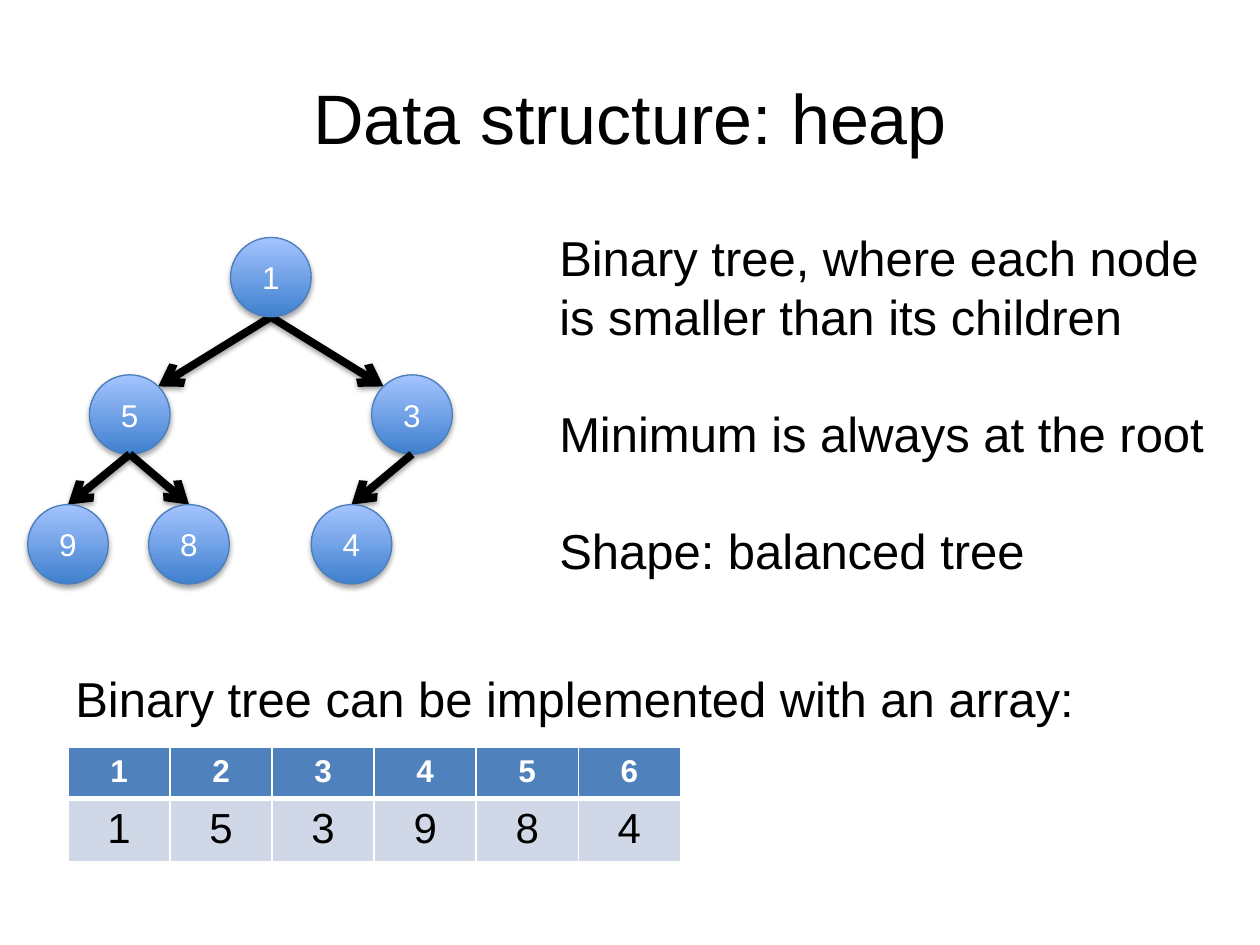
import math

import pptx
import pptx.dml.color
import pptx.enum.shapes
import pptx.enum.text
import pptx.oxml
import pptx.oxml.ns
import pptx.util
from pptx.util import Inches, Pt

FONT = "Arial"
BLACK, WHITE = "000000", "FFFFFF"
NODE_BOTTOM, NODE_TOP, NODE_LINE = "3F80CE", "A4C4FF", "4B7EBC"
HEADER_FILL, BODY_FILL = "4F81BD", "D0D8E8"

TITLE = "Data structure: heap"
FACTS = [
    "Binary tree, where each node is smaller than its children",
    "Minimum is always at the root",
    "Shape: balanced tree",
]
ARRAY_CAPTION = "Binary tree can be implemented with an array:"
HEAP = ["1", "5", "3", "9", "8", "4"]

# Centre of each node, and the (parent, child) edges of the tree
NODE_SIZE = (0.64, 0.63)
NODES = {
    "1": (2.15, 2.2),
    "5": (1.03, 3.29), "3": (3.27, 3.29),
    "9": (0.54, 4.32), "8": (1.5, 4.32), "4": (2.79, 4.32),
}
# Each layer draws its edges first, then its nodes over them
LAYERS = [
    ([("1", "5"), ("1", "3")], ["5", "1", "3"]),
    ([("5", "9"), ("5", "8"), ("3", "4")], ["9", "8", "4"]),
]

TABLE_LEFT, TABLE_TOP, COLUMN_WIDTH = 0.54, 5.93, 0.81
ROW_HEIGHTS = (0.41, 0.5)


def rgb(color):
    return pptx.dml.color.RGBColor.from_string(color)


def xml(text):
    """Parse one DrawingML element whose prefix is a."""
    head, rest = text.split(" ", 1)
    return pptx.oxml.parse_xml(f"{head} {pptx.oxml.ns.nsdecls('a')} {rest}")


def add_run(paragraph, text, size, color, bold=False):
    run = paragraph.add_run()
    run.text = text
    run.font.name = FONT
    run.font.size = Pt(size)
    run.font.bold = bold
    run.font.color.rgb = rgb(color)


def add_shadow(shape, distance, opacity):
    shape._element.spPr.append(xml(
        f'<a:effectLst ><a:outerShdw blurRad="{Pt(3.1)}" dist="{Pt(distance)}" '
        f'dir="5400000" rotWithShape="0"><a:srgbClr val="{BLACK}">'
        f'<a:alpha val="{opacity * 1000}"/></a:srgbClr></a:outerShdw></a:effectLst>'))


def add_edge(slide, parent, child):
    """Draw an arrow from below the parent to the near edge of the child."""
    (x1, y1), (x2, y2) = NODES[parent], NODES[child]
    width, height = NODE_SIZE
    if parent == "1":
        x2 += math.copysign(width / 2 * math.sqrt(0.5), x1 - x2)
        y2 -= height / 2 * math.sqrt(0.5)
    else:
        y2 -= height / 2
    edge = slide.shapes.add_connector(
        pptx.enum.shapes.MSO_CONNECTOR.STRAIGHT,
        Inches(x1), Inches(y1 + height / 2), Inches(x2), Inches(y2))
    edge.line.color.rgb = rgb(BLACK)
    edge.line.width = Pt(4.5)
    edge.line._get_or_add_ln().append(xml('<a:tailEnd type="arrow"/>'))
    add_shadow(edge, 1.6, 38)


def add_node(slide, label):
    x, y = NODES[label]
    width, height = NODE_SIZE
    node = slide.shapes.add_shape(
        pptx.enum.shapes.MSO_SHAPE.OVAL, Inches(x - width / 2),
        Inches(y - height / 2), Inches(width), Inches(height))
    node.fill.gradient()
    node.fill.gradient_angle = 90
    for stop, color in zip(node.fill.gradient_stops, (NODE_BOTTOM, NODE_TOP)):
        stop.color.rgb = rgb(color)
    node.line.color.rgb = rgb(NODE_LINE)
    node.line.width = Pt(0.75)
    add_shadow(node, 1.8, 35)
    node.text_frame.vertical_anchor = pptx.enum.text.MSO_ANCHOR.MIDDLE
    paragraph = node.text_frame.paragraphs[0]
    paragraph.alignment = pptx.enum.text.PP_ALIGN.CENTER
    add_run(paragraph, label, 18, WHITE)


def add_text(slide, box, lines):
    frame = slide.shapes.add_textbox(*map(Inches, box)).text_frame
    frame.word_wrap = True
    for index, line in enumerate(lines):
        paragraph = frame.add_paragraph() if index else frame.paragraphs[0]
        paragraph.line_spacing = Pt(33.5)
        paragraph.space_before = Pt(33.5 if index else 0)
        add_run(paragraph, line, 28, BLACK)


def add_array(slide):
    rows = [
        ([str(i + 1) for i in range(len(HEAP))], 18, WHITE, True, HEADER_FILL, (1, 3)),
        (HEAP, 24, BLACK, False, BODY_FILL, (3, 1)),
    ]
    table = slide.shapes.add_table(
        len(rows), len(HEAP), Inches(TABLE_LEFT), Inches(TABLE_TOP),
        Inches(COLUMN_WIDTH * len(HEAP)), Inches(sum(ROW_HEIGHTS))).table
    for column in table.columns:
        column.width = Inches(COLUMN_WIDTH)
    for r, (values, size, color, bold, fill, (top, bottom)) in enumerate(rows):
        table.rows[r].height = Inches(ROW_HEIGHTS[r])
        for c, value in enumerate(values):
            cell = table.cell(r, c)
            properties = cell._tc.get_or_add_tcPr()
            for side, width in (("L", 1), ("R", 1), ("T", top), ("B", bottom)):
                properties.append(xml(
                    f'<a:ln{side} w="{Pt(width)}"><a:solidFill>'
                    f'<a:srgbClr val="{WHITE}"/></a:solidFill></a:ln{side}>'))
            cell.fill.solid()
            cell.fill.fore_color.rgb = rgb(fill)
            paragraph = cell.text_frame.paragraphs[0]
            paragraph.alignment = pptx.enum.text.PP_ALIGN.CENTER
            add_run(paragraph, value, size, color, bold)


def main():
    presentation = pptx.Presentation()
    presentation.slide_width, presentation.slide_height = Inches(10), Inches(7.5)
    slide = presentation.slides.add_slide(presentation.slide_layouts[5])

    title = slide.shapes.title
    title.left, title.top, title.width, title.height = map(Inches, (0.5, 0.3, 9, 1.25))
    title.text_frame.vertical_anchor = pptx.enum.text.MSO_ANCHOR.MIDDLE
    paragraph = title.text_frame.paragraphs[0]
    paragraph.alignment = pptx.enum.text.PP_ALIGN.CENTER
    add_run(paragraph, TITLE, 40, BLACK)

    for edges, labels in LAYERS:
        for parent, child in edges:
            add_edge(slide, parent, child)
        for label in labels:
            add_node(slide, label)

    add_array(slide)
    add_text(slide, (4.34, 1.76, 5.51, 2.93), FACTS)
    add_text(slide, (0.5, 5.26, 8.75, 0.57), [ARRAY_CAPTION])
    presentation.save("out.pptx")


if __name__ == "__main__":
    main()
